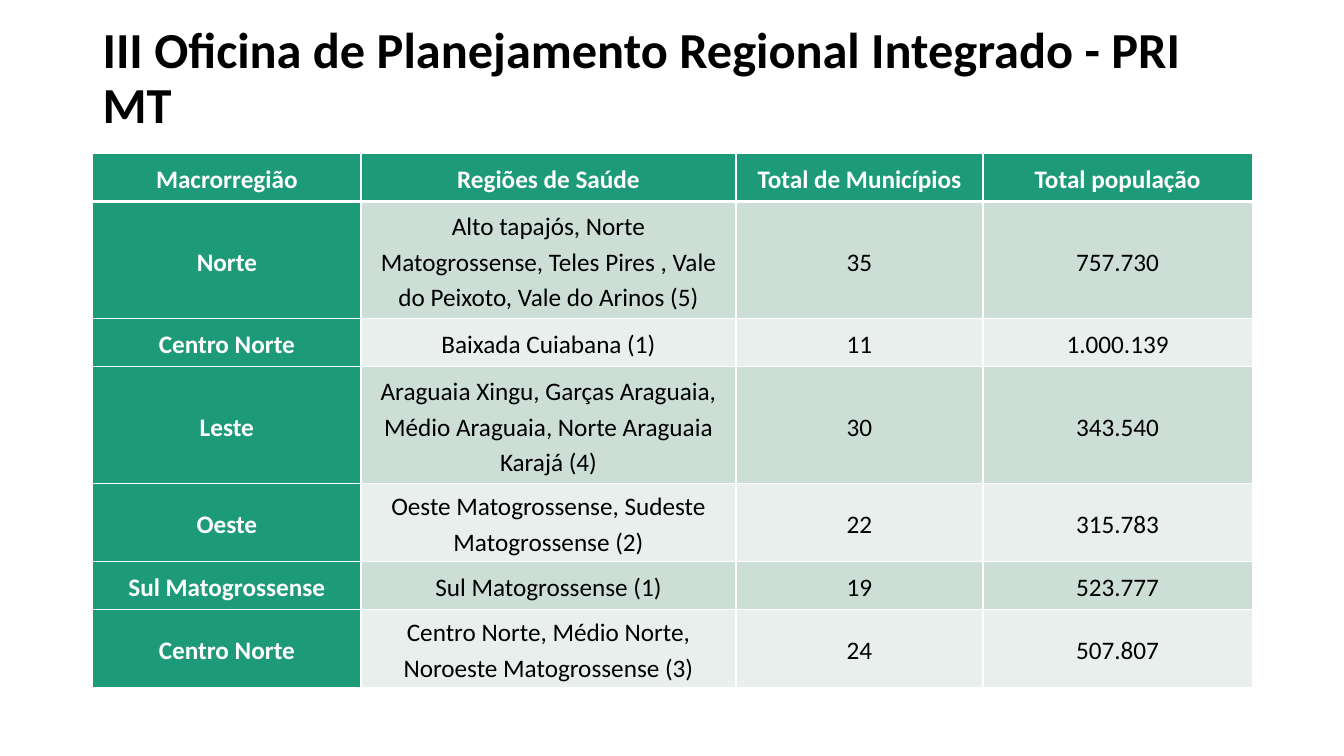
from pptx import Presentation, util as u
from pptx.dml import color
from pptx.enum import text as t
from pptx.oxml import parse_xml, ns

TITLE = "III Oficina de Planejamento Regional Integrado - PRI MT"
ROWS = [
    ("Macrorregião", "Regiões de Saúde", "Total de Municípios", "Total população"),
    ("Norte", "Alto tapajós, Norte Matogrossense, Teles Pires , Vale do Peixoto, Vale do Arinos (5)", "35", "757.730"),
    ("Centro Norte", "Baixada Cuiabana (1)", "11", "1.000.139"),
    ("Leste", "Araguaia Xingu, Garças Araguaia, Médio Araguaia, Norte Araguaia Karajá (4)", "30", "343.540"),
    ("Oeste", "Oeste Matogrossense, Sudeste Matogrossense (2)", "22", "315.783"),
    ("Sul Matogrossense", "Sul Matogrossense (1)", "19", "523.777"),
    ("Centro Norte", "Centro Norte, Médio Norte, Noroeste Matogrossense (3)", "24", "507.807"),
]
WIDTHS = [2.66, 3.72, 2.45, 2.67]
HEIGHTS = [0.48, 1.16, 0.48, 1.16, 0.77, 0.48, 0.77]
LEFT, WIDE = 0.92, 11.5
GREEN, DARK, LIGHT = "1D9A78", "CDDED6", "E8EFEC"
WHITE, BLACK = "FFFFFF", "000000"
MID = t.MSO_ANCHOR.MIDDLE
FRAME = dict(word_wrap=True, auto_size=t.MSO_AUTO_SIZE.NONE, vertical_anchor=MID)
CELL = dict(vertical_anchor=MID, margin_left=u.Inches(0.07),
            margin_right=u.Inches(0.07), margin_top=0, margin_bottom=0)


def put(item, vals):
    for key, val in vals.items():
        setattr(item, key, val)


def paint(part, tone):
    part.rgb = color.RGBColor.from_string(tone)


def write(frame, words, size, tone, bold, **para):
    line = frame.paragraphs[0]
    put(line, para)
    run = line.add_run()
    run.text = words
    put(run.font, dict(name="Calibri", size=u.Pt(size), bold=bold))
    paint(run.font.color, tone)


def edge(cell, side, width):
    cell._tc.get_or_add_tcPr().append(parse_xml(
        f'<a:ln{side} {ns.nsdecls("a")} w="{u.Pt(width)}"><a:solidFill>'
        f'<a:srgbClr val="{WHITE}"/></a:solidFill></a:ln{side}>'))


def fill_cell(cell, words, row, col):
    head = row == 0 or col == 0
    put(cell, CELL)
    for side in "LRTB":
        thick = (row, side) in ((0, "B"), (1, "T"))
        edge(cell, side, 3 if thick else 1)
    cell.fill.solid()
    paint(cell.fill.fore_color, GREEN if head else DARK if row % 2 else LIGHT)
    write(cell.text_frame, words, 18, WHITE if head else BLACK, head,
          alignment=t.PP_ALIGN.CENTER, line_spacing=1.15)


def main():
    deck = Presentation()
    put(deck, dict(slide_width=u.Inches(13.33), slide_height=u.Inches(7.5)))
    slide = deck.slides.add_slide(deck.slide_layouts[6])

    title = slide.shapes.add_textbox(*map(u.Inches, (LEFT, 0.4, WIDE, 0.78)))
    put(title.text_frame, FRAME)
    write(title.text_frame, TITLE, 36, BLACK, True, line_spacing=0.9)

    place = map(u.Inches, (LEFT, 1.52, WIDE, sum(HEIGHTS)))
    table = slide.shapes.add_table(len(ROWS), len(WIDTHS), *place).table
    for col, width in zip(table.columns, WIDTHS):
        col.width = u.Inches(width)
    for row, height in zip(table.rows, HEIGHTS):
        row.height = u.Inches(height)
    for r, row in enumerate(ROWS):
        for c, words in enumerate(row):
            fill_cell(table.cell(r, c), words, r, c)
    deck.save("out.pptx")


if __name__ == "__main__":
    main()
